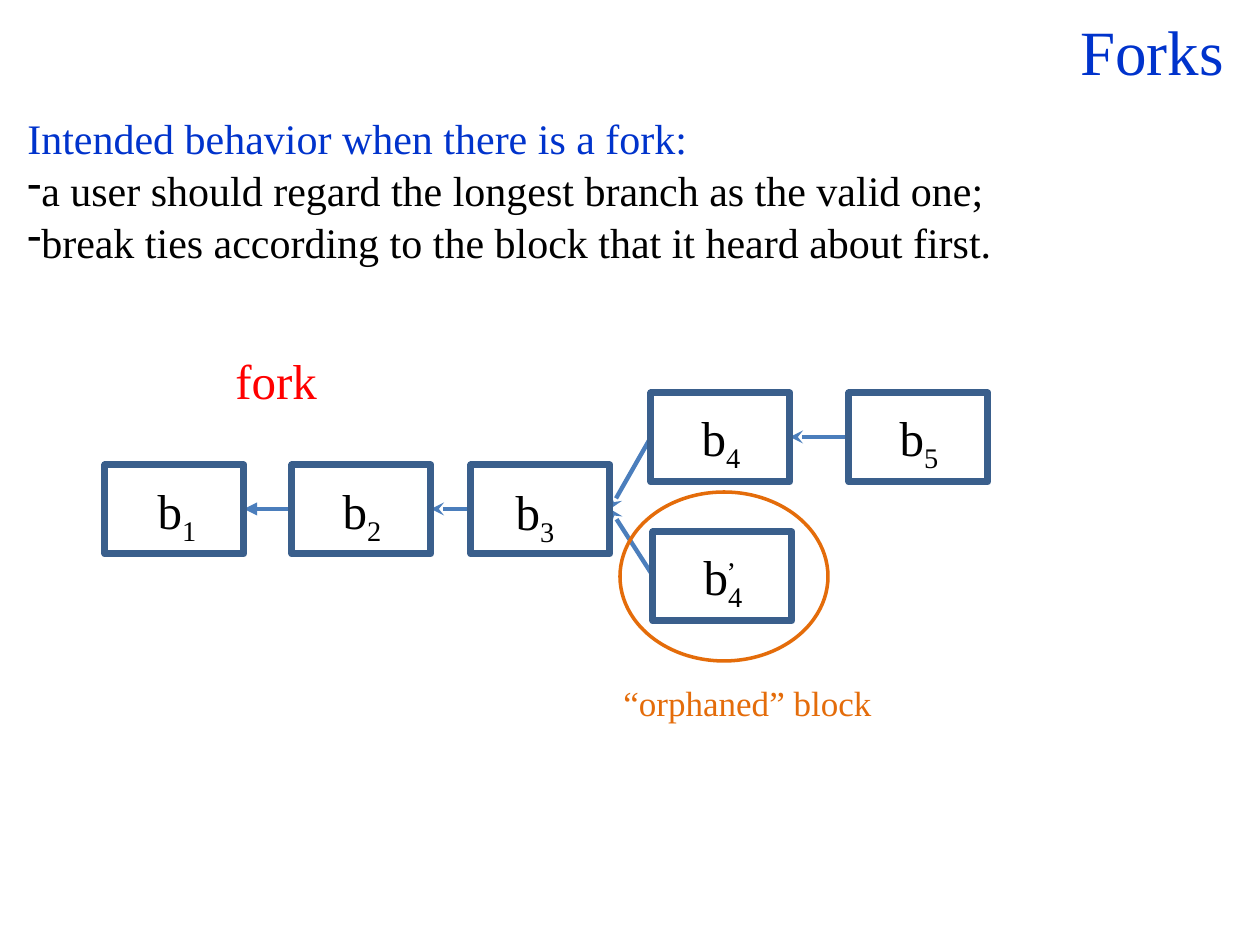
from lxml import etree
from pptx import Presentation
from pptx.dml.color import RGBColor
from pptx.enum.shapes import MSO_CONNECTOR, MSO_SHAPE
from pptx.enum.text import PP_ALIGN
from pptx.oxml.ns import qn
from pptx.util import Emu, Pt

PX = 914400 / 126
STRAIGHT = MSO_CONNECTOR.STRAIGHT
RECTANGLE, OVAL = MSO_SHAPE.RECTANGLE, MSO_SHAPE.OVAL
LEFT, RIGHT = PP_ALIGN.LEFT, PP_ALIGN.RIGHT

BLACK = RGBColor(0x00, 0x00, 0x00)
BLUE = RGBColor(0x00, 0x33, 0xCC)
RED = RGBColor(0xFF, 0x00, 0x00)
ORANGE = RGBColor(0xE4, 0x6C, 0x0A)
BLOCK_EDGE = RGBColor(0x3A, 0x5F, 0x8C)
ARROW = RGBColor(0x4B, 0x7E, 0xBC)

BLOCK_W, BLOCK_H = 139, 89


def px(*lengths):
    return [Emu(round(length * PX)) for length in lengths]


class ForkSlide:
    font_name = "Times New Roman"

    def __init__(self, deck):
        self.slide = deck.slides.add_slide(deck.slide_layouts[6])

    def outline(self, kind, box, color, width):
        shape = self.slide.shapes.add_shape(kind, *px(*box))
        shape.shadow.inherit = False
        shape.fill.background()
        shape.line.color.rgb = color
        shape.line.width = Pt(width)

    def arrow(self, start, end, head):
        link = self.slide.shapes.add_connector(STRAIGHT, *px(*start, *end))
        link.line.color.rgb = ARROW
        link.line.width = Pt(2.5)
        etree.SubElement(link.line._get_or_add_ln(), qn("a:tailEnd"), type=head)
        etree.SubElement(link._element.spPr, qn("a:effectLst"))

    def text_frame(self, box):
        frame = self.slide.shapes.add_textbox(*px(*box)).text_frame
        frame.word_wrap = True
        return frame

    def run(self, paragraph, text, size, color):
        run = paragraph.add_run()
        run.text = text
        style = {"name": self.font_name, "size": Pt(size)}
        for attribute, value in style.items():
            setattr(run.font, attribute, value)
        run.font.color.rgb = color
        return run

    def text(self, box, text, size, color, align=LEFT):
        paragraph = self.text_frame(box).paragraphs[0]
        paragraph.alignment = align
        self.run(paragraph, text, size, color)

    def rules(self, box, heading, points, size):
        frame = self.text_frame(box)
        self.run(frame.paragraphs[0], heading, size, BLUE)
        for point in points:
            paragraph = frame.add_paragraph()
            paragraph.space_before = Pt(1)
            self.run(paragraph, point, size, BLACK)
            properties = paragraph._p.get_or_add_pPr()
            etree.SubElement(properties, qn("a:buFontTx"))
            etree.SubElement(properties, qn("a:buChar"), char="-")

    def subscripted(self, box, base, subscript):
        paragraph = self.text_frame(box).paragraphs[0]
        self.run(paragraph, base, 28, BLACK)
        lowered = self.run(paragraph, subscript, 28, BLACK)
        lowered.font._element.set("baseline", "-25000")

    def block(self, corner, label_offset, number):
        left, top = corner
        dx, dy = label_offset
        self.outline(RECTANGLE, (left, top, BLOCK_W, BLOCK_H), BLOCK_EDGE, 4)
        self.subscripted((left + dx, top + dy, 92, 72), " b", number)


def main():
    deck = Presentation()
    deck.slide_width, deck.slide_height = px(1260, 945)
    page = ForkSlide(deck)

    page.text((15, 6, 1221, 89), "Forks", 36, BLUE, RIGHT)
    page.rules(
        (15, 106, 1235, 165),
        "Intended behavior when there is a fork:",
        [
            "a user should regard the longest branch as the valid one;",
            "break ties according to the block that it heard about first.",
        ],
        24,
    )
    page.text((223, 344, 287, 72), "fork", 28, RED)

    blocks = {
        "b1": ((105, 465), (28, 9), "1"),
        "b2": ((292, 465), (26, 9), "2"),
        "b3": ((471, 465), (20, 10), "3"),
        "b4": ((651, 393), (26, 8), "4"),
        "b4 orphan": ((653, 532), (26, 8), "4"),
        "b5": ((849, 393), (26, 8), "5"),
    }
    links = [
        ("b2", "b1", "triangle"),
        ("b3", "b2", "stealth"),
        ("b4", "b3", "stealth"),
        ("b4 orphan", "b3", "stealth"),
        ("b5", "b4", "stealth"),
    ]
    for child, parent, head in links:
        child_left, child_top = blocks[child][0]
        parent_left, parent_top = blocks[parent][0]
        middle = BLOCK_H // 2
        page.arrow(
            (child_left, child_top + middle),
            (parent_left + BLOCK_W, parent_top + middle),
            head,
        )
    for corner, label_offset, number in blocks.values():
        page.block(corner, label_offset, number)

    page.subscripted((702, 515, 59, 72), " ", "’")
    page.outline(OVAL, (620, 492, 208, 169), ORANGE, 2)
    page.text((611, 675, 406, 55), "“orphaned” block", 20, ORANGE)

    deck.save("out.pptx")


if __name__ == "__main__":
    main()
